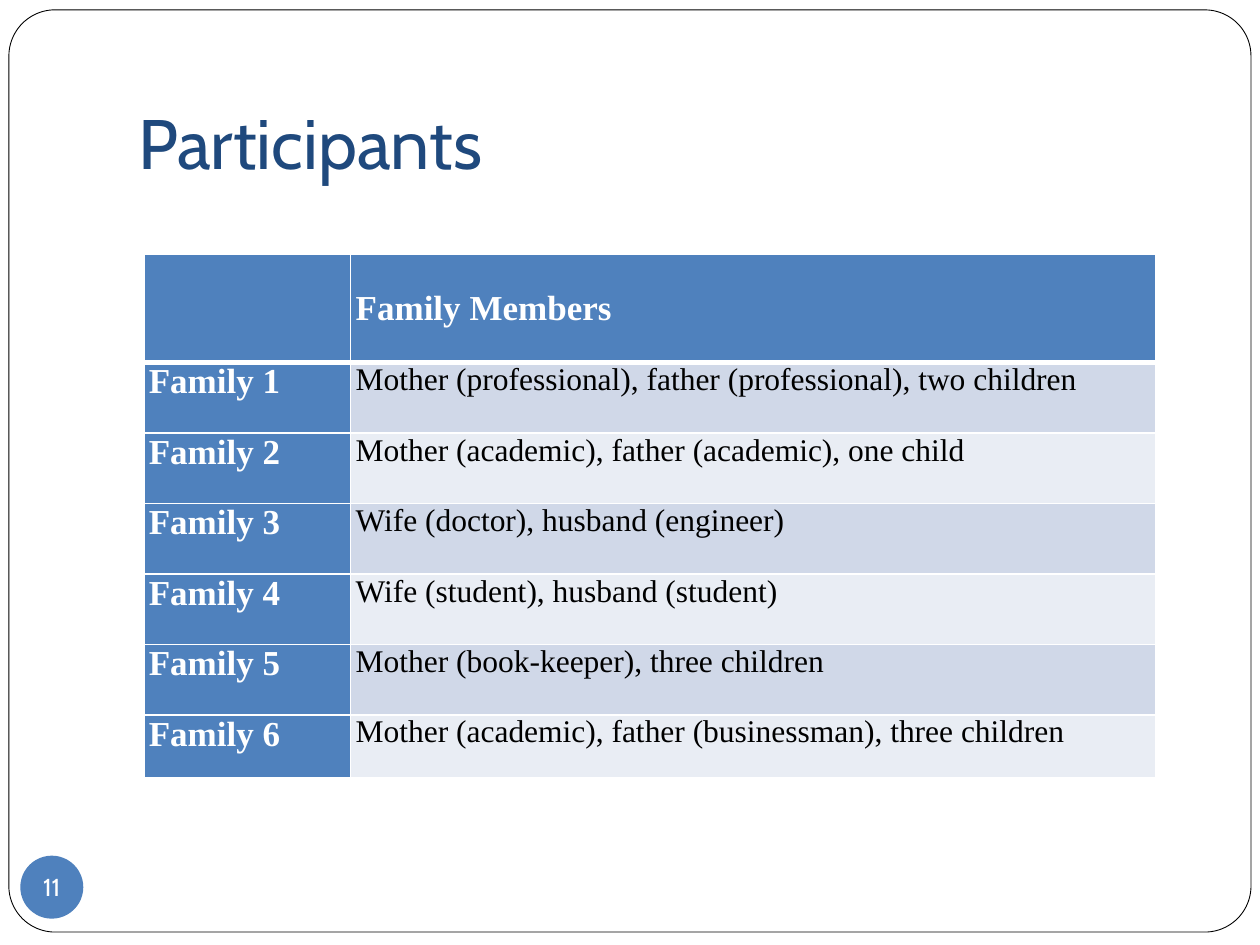
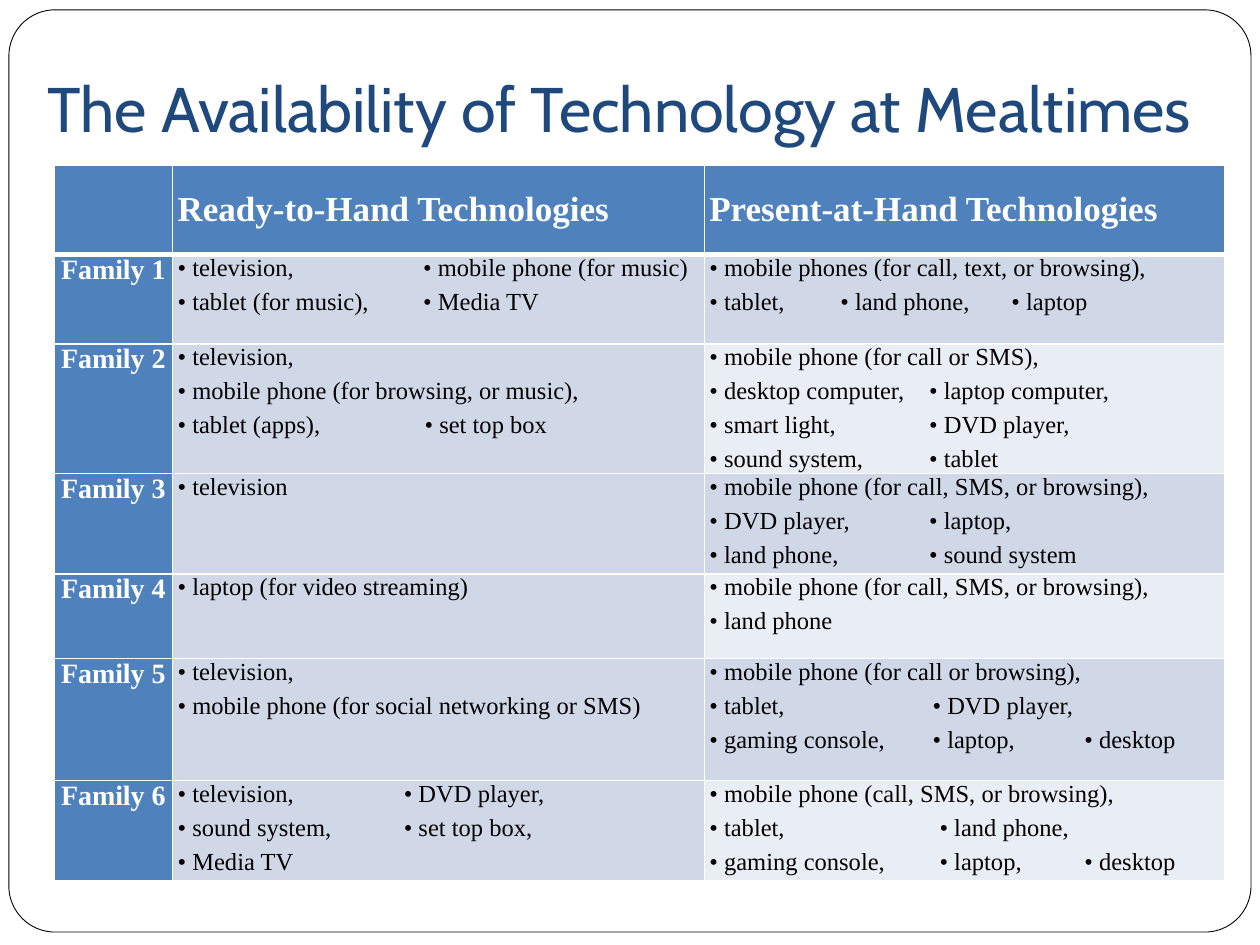
from dataclasses import dataclass
from typing import Any

from lxml.etree import SubElement
from pptx import Presentation
from pptx.dml.color import RGBColor
from pptx.enum.shapes import MSO_SHAPE
from pptx.enum.text import MSO_ANCHOR, MSO_AUTO_SIZE, PP_ALIGN
from pptx.oxml import parse_xml
from pptx.oxml.ns import nsdecls, qn
from pptx.util import Cm, Pt

HUES = {
    "white": "FFFFFF",
    "black": "000000",
    "navy": "1F497D",
    "blue": "4F81BD",
    "band": "D0D8E8",
    "pale": "E9EDF4",
}
SANS, SERIF = "Cabin", "Times New Roman"
PAD = {
    "margin_left": Cm(0.1),
    "margin_right": Cm(0.1),
    "margin_top": 0,
    "margin_bottom": 0,
}
GAPS = {"space_before": Pt(2), "space_after": Pt(2)}
HEAD = {"name": SERIF, "size": Pt(20), "bold": True}
TITLE = {
    "margin_left": Cm(0.25),
    "margin_right": Cm(0.25),
    "margin_top": Cm(0.13),
    "margin_bottom": Cm(0.25),
    "vertical_anchor": MSO_ANCHOR.BOTTOM,
    "auto_size": MSO_AUTO_SIZE.NONE,
    "word_wrap": True,
}
BADGE = {
    "margin_left": 0,
    "margin_right": 0,
    "margin_top": 0,
    "margin_bottom": 0,
    "vertical_anchor": MSO_ANCHOR.MIDDLE,
    "word_wrap": False,
}


@dataclass
class Entry:
    """Lines of a cell; the items of a line sit at the tab stops (cm)."""
    lines: list[str]
    tabs: tuple[float, ...] = ()


@dataclass
class Grid:
    left: float
    top: float
    cols: list[float]
    rows: list[float]
    heads: list[str]
    body: list[list[Entry]]
    label: int
    size: int
    align: PP_ALIGN


@dataclass
class Page:
    title: str
    box: tuple[float, float, float, float]
    size: int
    grid: Grid
    number: str = ""


def tech(*lines: str, tabs: tuple[float, ...] = ()) -> Entry:
    """Mark each item, split by a bar, with a bullet."""
    return Entry(["\t".join(f"• {item}" for item in line.split("|")) for line in lines], tabs)


FOLKS = [
    "Mother (professional), father (professional), two children",
    "Mother (academic), father (academic), one child",
    "Wife (doctor), husband (engineer)",
    "Wife (student), husband (student)",
    "Mother (book-keeper), three children",
    "Mother (academic), father (businessman), three children",
]
TOOLS = [
    [tech("television,|mobile phone (for music)", "tablet (for music),|Media TV", tabs=(4.95,)),
     tech("mobile phones (for call, text, or browsing),", "tablet,|land phone,|laptop",
          tabs=(2.64, 6.09))],
    [tech("television,", "mobile phone (for browsing, or music),",
          "tablet (apps),|set top box", tabs=(4.98,)),
     tech("mobile phone (for call or SMS),", "desktop computer,|laptop computer,",
          "smart light,|DVD player,", "sound system,|tablet", tabs=(4.43,))],
    [tech("television"),
     tech("mobile phone (for call, SMS, or browsing),", "DVD player,|laptop,",
          "land phone,|sound system", tabs=(4.43,))],
    [tech("laptop (for video streaming)"),
     tech("mobile phone (for call, SMS, or browsing),", "land phone")],
    [tech("television,", "mobile phone (for social networking or SMS)"),
     tech("mobile phone (for call or browsing),", "tablet,|DVD player,",
          "gaming console,|laptop,|desktop", tabs=(4.5, 7.56))],
    [tech("television,|DVD player,", "sound system,|set top box,", "Media TV", tabs=(4.56,)),
     tech("mobile phone (call, SMS, or browsing),", "tablet,|land phone,",
          "gaming console,|laptop,|desktop", tabs=(4.64, 7.56))],
]
PAGES = [
    Page("Participants", (2.54, 0.76, 21.59, 3.18), 40,
         Grid(2.9, 5.13, [4.17, 16.23], [2.18] + [1.42] * 5 + [1.27],
              ["", "Family Members"], [[Entry([text])] for text in FOLKS],
              20, 18, PP_ALIGN.LEFT), "11"),
    Page("The Availability of Technology at Mealtimes", (0.71, 0, 24.21, 3.18), 36,
         Grid(1.09, 3.33, [2.39, 10.72, 10.49], [1.8, 1.8, 2.03, 2.03, 1.7, 2.46, 2.03],
              ["", "Ready-to-Hand Technologies", "Present-at-Hand Technologies"], TOOLS,
              16, 14, PP_ALIGN.CENTER)),
]


def put(item: Any, vals: dict[str, Any]) -> None:
    for name, val in vals.items():
        setattr(item, name, val)


def hue(name: str) -> RGBColor:
    return RGBColor.from_string(HUES[name])


def paint(item: Any, name: str) -> None:
    item.fill.solid()
    item.fill.fore_color.rgb = hue(name)


def ink(para: Any, color: str, vals: dict[str, Any]) -> None:
    put(para.font, vals)
    for run in para.runs:
        put(run.font, vals)
        run.font.color.rgb = hue(color)


def edge(cell: Any, row: int) -> None:
    """Rule a cell in white, thicker beneath the header."""
    wide = {"L": 1, "R": 1, "T": 3 if row == 1 else 1, "B": 3 if row == 0 else 1}
    props = cell._tc.get_or_add_tcPr()
    for spot, (side, width) in enumerate(wide.items()):
        props.insert(spot, parse_xml(
            f'<a:ln{side} {nsdecls("a")} w="{Pt(width)}"><a:solidFill>'
            f'<a:srgbClr val="{HUES["white"]}"/></a:solidFill></a:ln{side}>'))


def stops(para: Any, tabs: tuple[float, ...]) -> None:
    tablst = SubElement(para._p.get_or_add_pPr(), qn("a:tabLst"))
    for pos in tabs:
        SubElement(tablst, qn("a:tab"), pos=str(Cm(pos)), algn="l")


def write(cell: Any, entry: Entry, color: str, vals: dict[str, Any], align: PP_ALIGN) -> None:
    put(cell, PAD)
    cell.text_frame.text = "\n".join(entry.lines)
    for para in cell.text_frame.paragraphs:
        put(para, GAPS | {"alignment": align})
        if entry.tabs:
            stops(para, entry.tabs)
        ink(para, color, vals)


def chart_grid(slide: Any, grid: Grid) -> None:
    """Draw the family table with header row and label column."""
    frame = slide.shapes.add_table(
        len(grid.rows), len(grid.cols), Cm(grid.left), Cm(grid.top),
        Cm(sum(grid.cols)), Cm(sum(grid.rows)))
    table = frame.table
    table.horz_banding = False
    for col, width in zip(table.columns, grid.cols):
        col.width = Cm(width)
    for row, height in zip(table.rows, grid.rows):
        row.height = Cm(height)

    data = [[Entry([text]) for text in grid.heads]]
    data += [[Entry([f"Family {n}"]), *cells] for n, cells in enumerate(grid.body, 1)]
    last = len(grid.cols) - 1
    for r, line in enumerate(data):
        for c, entry in enumerate(line):
            cell = table.cell(r, c)
            if r == 0:
                write(cell, entry, "white", HEAD, PP_ALIGN.LEFT)
                cell.vertical_anchor = MSO_ANCHOR.MIDDLE
                paint(cell, "blue")
            elif c == 0:
                write(cell, entry, "white", HEAD | {"size": Pt(grid.label)}, grid.align)
                paint(cell, "blue")
            else:
                vals = {"name": SERIF, "size": Pt(grid.size), "bold": False}
                write(cell, entry, "black", vals, PP_ALIGN.LEFT)
                paint(cell, "pale" if c == last and r % 2 == 0 else "band")
            edge(cell, r)


def add_frame(deck: Any, slide: Any) -> None:
    """Draw the rounded page frame and move it to the back of the master."""
    frame = slide.shapes.add_shape(
        MSO_SHAPE.ROUNDED_RECTANGLE, Cm(0.18), Cm(0.2), Cm(25.04), Cm(18.59))
    frame.adjustments[0] = 0.05
    frame.shadow.inherit = False
    paint(frame, "white")
    frame.line.color.rgb = hue("black")
    frame.line.width = Pt(0.5)
    deck.slide_master.shapes.element.insert(2, frame.element)


def add_title(slide: Any, page: Page) -> None:
    title = slide.shapes.title
    put(title, dict(zip(("left", "top", "width", "height"), map(Cm, page.box))))
    title.text_frame.text = page.title
    put(title.text_frame, TITLE)
    para = title.text_frame.paragraphs[0]
    para.alignment = PP_ALIGN.LEFT
    ink(para, "navy", {"name": SANS, "size": Pt(page.size)})


def add_badge(slide: Any, number: str) -> None:
    badge = slide.shapes.add_shape(
        MSO_SHAPE.OVAL, Cm(0.41), Cm(17.25), Cm(1.27), Cm(1.27))
    badge.shadow.inherit = False
    paint(badge, "blue")
    badge.line.fill.background()
    badge.text_frame.text = number
    put(badge.text_frame, BADGE)
    para = badge.text_frame.paragraphs[0]
    para.alignment = PP_ALIGN.CENTER
    ink(para, "white", {"name": SANS, "size": Pt(14)})


def main() -> None:
    deck = Presentation()
    put(deck, {"slide_width": Cm(25.4), "slide_height": Cm(19.05)})
    for index, page in enumerate(PAGES):
        slide = deck.slides.add_slide(deck.slide_layouts[5])
        if index == 0:
            add_frame(deck, slide)
        add_title(slide, page)
        if page.number:
            add_badge(slide, page.number)
        chart_grid(slide, page.grid)
    deck.save("out.pptx")


if __name__ == "__main__":
    main()
